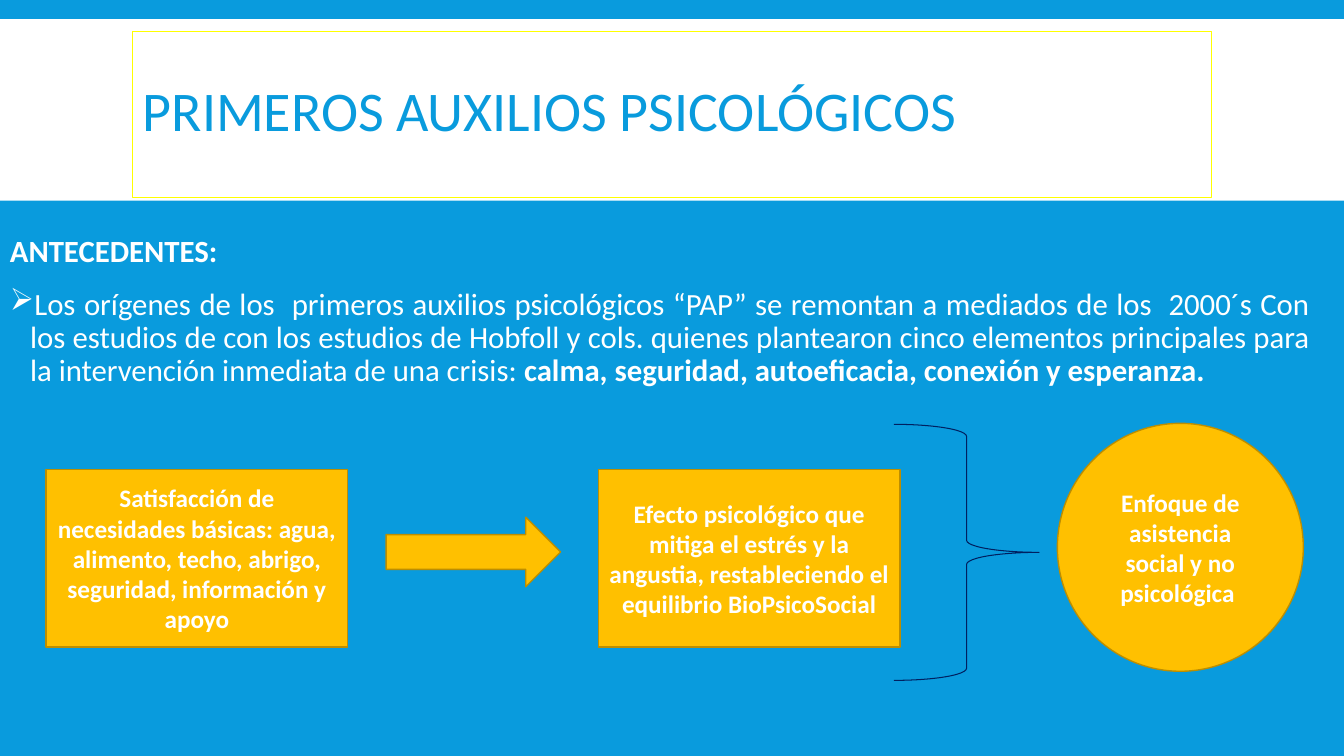
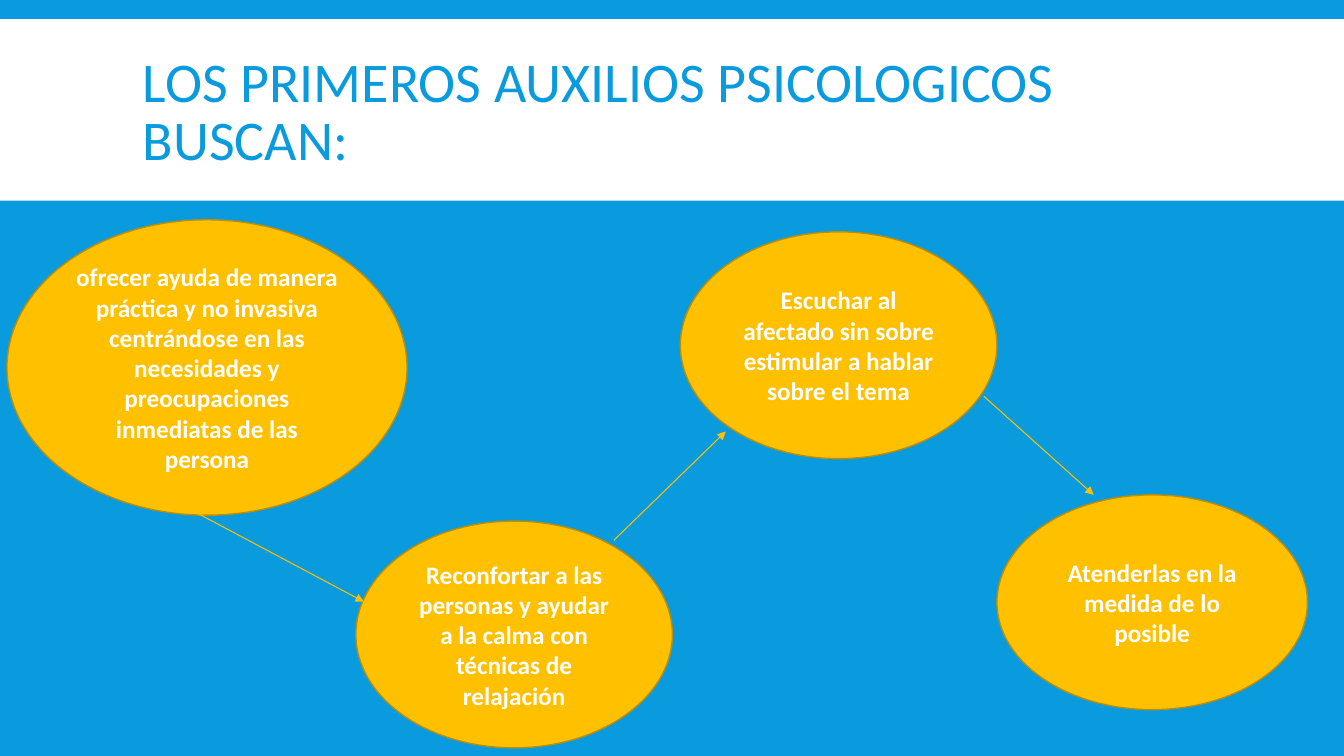
from dataclasses import dataclass
from lxml.etree import SubElement
from pptx import Presentation
from pptx.dml.color import RGBColor
from pptx.enum.shapes import MSO_CONNECTOR as Link, MSO_SHAPE as Kind
from pptx.enum.text import MSO_ANCHOR as Anchor, PP_ALIGN as Align
from pptx.oxml.ns import qn
from pptx.util import Pt


@dataclass
class Theme:
    blue: RGBColor = RGBColor(0x09, 0x9B, 0xDD)
    white: RGBColor = RGBColor(0xFF, 0xFF, 0xFF)
    gold: RGBColor = RGBColor(0xFF, 0xC0, 0x00)
    edge: RGBColor = RGBColor(0xBD, 0x8E, 0x00)
    navy: RGBColor = RGBColor(0x00, 0x20, 0x60)
    yellow: RGBColor = RGBColor(0xFF, 0xFF, 0x00)
    font: str = "Calibri"
    title: int = 40
    body: int = 22
    label: int = 18


theme = Theme()


def write(para, text, size, color, bold=False):
    run = para.add_run()
    run.text = text
    font = run.font
    font.name, font.size, font.bold = theme.font, Pt(size), bold
    font.color.rgb = color


def draw(slide, kind, box, fill=theme.gold, line=theme.edge, width=1, text=""):
    shape = slide.shapes.add_shape(kind, *map(Pt, box))
    shape.shadow.inherit = False
    if fill is None:
        shape.fill.background()
    else:
        shape.fill.solid()
        shape.fill.fore_color.rgb = fill
    if line is None:
        shape.line.fill.background()
    else:
        shape.line.color.rgb = line
        shape.line.width = Pt(width)
    if text:
        frame = shape.text_frame
        frame.word_wrap = True
        frame.vertical_anchor = Anchor.MIDDLE
        para = frame.paragraphs[0]
        para.alignment = Align.CENTER
        write(para, text, theme.label, theme.white, True)


# Deck with a shared blue background
deck = Presentation()
deck.slide_width, deck.slide_height = Pt(960), Pt(540)
back = deck.slide_master.background.fill
back.solid()
back.fore_color.rgb = theme.blue

# Slides with white band and title
slides = []
for text, frame_line in (
    ("PRIMEROS AUXILIOS PSICOLÓGICOS", theme.yellow),
    ("LOS PRIMEROS AUXILIOS PSICOLOGICOS BUSCAN:", None),
):
    slide = deck.slides.add_slide(deck.slide_layouts[6])
    draw(slide, Kind.RECTANGLE, (0, 13.7, 960, 129.6), theme.white, None)
    title = slide.shapes.add_textbox(Pt(95), Pt(22.3), Pt(770.4), Pt(118.8))
    if frame_line is not None:
        title.line.color.rgb = frame_line
        title.line.width = Pt(0.75)
    title.text_frame.word_wrap = True
    title.text_frame.vertical_anchor = Anchor.MIDDLE
    para = title.text_frame.paragraphs[0]
    para.line_spacing = 0.85
    write(para, text, theme.title, theme.blue)
    slides.append(slide)
origin, goals = slides

# Background text
body = origin.shapes.add_textbox(Pt(0), Pt(165), Pt(943), Pt(353)).text_frame
body.word_wrap = True
head, item = body.paragraphs[0], body.add_paragraph()
for para in (head, item):
    para.line_spacing = 0.9
    para.space_after = Pt(2)
write(head, "ANTECEDENTES:", theme.body, theme.white, True)
item.space_before = Pt(12)
item.alignment = Align.JUSTIFY
write(item, "Los orígenes de los  primeros auxilios psicológicos “PAP” se remontan "
      "a mediados de los  2000´s Con los estudios de con los estudios de Hobfoll "
      "y cols. quienes plantearon cinco elementos principales para la intervención "
      "inmediata de una crisis: ", theme.body, theme.white)
write(item, "calma, seguridad, autoeficacia, conexión y esperanza.",
      theme.body, theme.white, True)

# Bullet with hanging indent
props = item._p.get_or_add_pPr()
props.set("marL", str(Pt(14.4)))
props.set("indent", str(-Pt(14.4)))
SubElement(props, qn("a:buFont")).set("typeface", "Wingdings 3")
props.remove(props[-1])
SubElement(props, qn("a:buChar")).set("char", "➢")

# From basic needs to the approach
for left, text in (
    (33, "Satisfacción de necesidades básicas: agua, alimento, techo, abrigo, "
         "seguridad, información y apoyo"),
    (427.5, "Efecto psicológico que mitiga el estrés y la angustia, "
            "restableciendo el equilibrio BioPsicoSocial"),
):
    draw(origin, Kind.RECTANGLE, (left, 335.5, 215.3, 126.7), text=text)
draw(origin, Kind.RIGHT_ARROW, (275.8, 369.4, 124.6, 49.7))
draw(origin, Kind.RIGHT_BRACE, (638.6, 303.1, 103.7, 182.9),
     None, theme.navy, 0.75)
draw(origin, Kind.OVAL, (755.3, 302.4, 175.7, 177.1),
     text="Enfoque de asistencia social y no psicológica ")

# Goals
for box, text in (
    ((5, 157, 285.8, 211),
     "ofrecer ayuda de manera práctica y no invasiva centrándose en las "
     "necesidades y preocupaciones inmediatas de las persona"),
    ((486, 165.6, 226.1, 162),
     "Escuchar al afectado sin sobre estimular a hablar sobre el tema"),
    ((712.1, 353.5, 221.8, 153.4), "Atenderlas en la medida de lo posible"),
    ((254.2, 372.2, 226.1, 162),
     "Reconfortar a las personas y ayudar a la calma con técnicas de relajación"),
):
    draw(goals, Kind.OVAL, box, text=text)

# Arrows between goals
for ends in (
    (113.8, 352.1, 259.9, 429.8),
    (438.5, 385.9, 518.4, 308.2),
    (702.7, 283, 781.2, 353.5),
):
    arrow = goals.shapes.add_connector(Link.STRAIGHT, *map(Pt, ends))
    arrow.line.color.rgb = theme.gold
    arrow.line.width = Pt(0.75)
    SubElement(arrow.line._get_or_add_ln(), qn("a:tailEnd")).set("type", "triangle")
    SubElement(arrow._element.spPr, qn("a:effectLst"))

deck.save("out.pptx")
